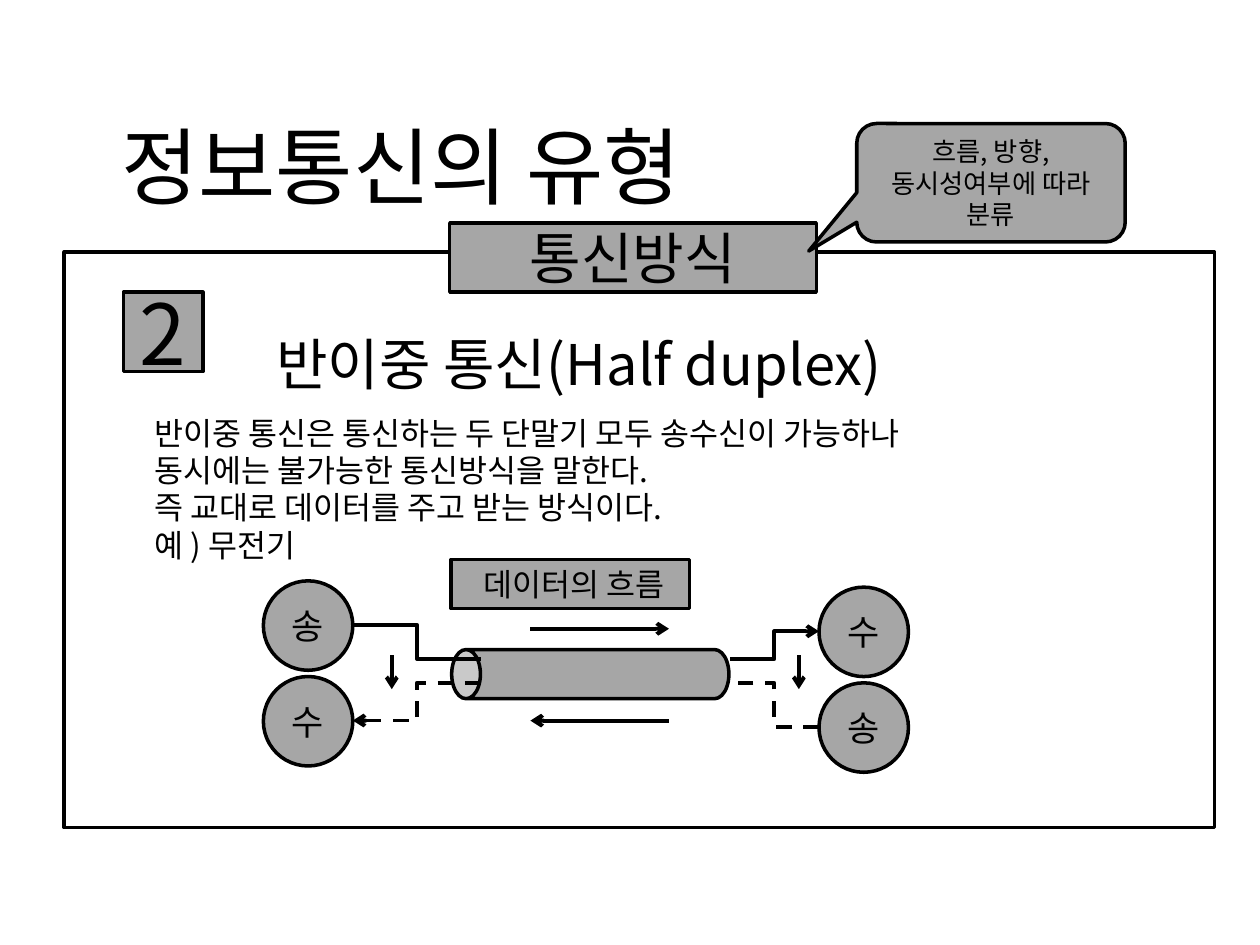
from pptx import Presentation
from pptx.dml.color import RGBColor
from pptx.enum.dml import MSO_LINE_DASH_STYLE as Dash
from pptx.enum.shapes import MSO_CONNECTOR as Link, MSO_SHAPE as Shape
from pptx.enum.text import MSO_ANCHOR as Anchor, PP_ALIGN as Align
from pptx.oxml.ns import qn
from pptx.util import Pt
from lxml.etree import SubElement

FONT = "Noto Sans CJK KR"
BLACK, GRAY, WHITE = "000000", "A6A6A6", "FFFFFF"


def color(value):
    return RGBColor.from_string(value)


def write(box, lines, margins, anchor=Anchor.MIDDLE):
    """Fill a box with lines of (text, size, alignment, line spacing)."""
    frame = box.text_frame
    side, top = margins
    layout = {"word_wrap": True, "vertical_anchor": anchor,
              "margin_left": Pt(side), "margin_right": Pt(side),
              "margin_top": Pt(top), "margin_bottom": Pt(top)}
    for name, value in layout.items():
        setattr(frame, name, value)
    for index, (text, size, align, spacing) in enumerate(lines):
        para = frame.add_paragraph() if index else frame.paragraphs[0]
        para.text = text
        para.alignment = align
        if spacing:
            para.line_spacing = Pt(spacing)
        for span in para.runs:
            span.font.size = Pt(size)
            span.font.name = FONT
            span.font.color.rgb = color(BLACK)
            SubElement(span.font._element, qn("a:ea"), typeface=FONT)


deck = Presentation()
deck.slide_width, deck.slide_height = Pt(720), Pt(540)
page = deck.slides.add_slide(deck.slide_layouts[6])

# Shapes, back to front: kind, place, fill, text lines, size, line spacing
shapes = [
    (Shape.RECTANGLE, (36.7, 144, 657.4, 329), WHITE, [], 0, None),
    (Shape.RECTANGLE, (257, 127.4, 209.5, 39.6), GRAY, ["통신방식"], 32, None),
    (Shape.RECTANGLE, (70.6, 167, 45.4, 45.4), GRAY, ["2"], 48, None),
    (Shape.ROUNDED_RECTANGULAR_CALLOUT, (489.6, 70.6, 153.4, 67.7), GRAY,
     ["흐름, 방향,", "동시성여부에 따라", "분류"], 15, 18),
    (Shape.RECTANGLE, (257.8, 319.7, 136.1, 28.1), GRAY,
     [" 데이터의 흐름"], 18, None),
    (Shape.CAN, (323.3, 306, 28.1, 158.4), GRAY, [], 0, None),
]
# Stations: sender over receiver on the left, receiver over sender on the right
for left, top, labels in [(150.5, 331.9, "송수"), (468, 335.5, "수송")]:
    for row, label in enumerate(labels):
        shapes.append((Shape.OVAL, (left, top + row * 54.7, 51.1, 51.1),
                       GRAY, [label], 20, None))

for kind, place, fill, texts, size, spacing in shapes:
    box = page.shapes.add_shape(kind, *map(Pt, place))
    box.shadow.inherit = False
    box.fill.solid()
    box.fill.fore_color.rgb = color(fill)
    box.line.color.rgb = color(BLACK)
    box.line.width = Pt(2)
    if kind == Shape.CAN:
        box.rotation = 270
        box.adjustments[0] = 0.585
    elif kind == Shape.ROUNDED_RECTANGULAR_CALLOUT:
        for index, value in enumerate((-0.679, 0.577, 0.167)):
            box.adjustments[index] = value
    if texts:
        write(box, [(text, size, Align.CENTER, spacing) for text in texts], (0, 0))

# Title
title = page.shapes.add_textbox(*map(Pt, (41.8, 54.7, 375.1, 78.5)))
write(title, [("정보통신의 유형", 48, Align.CENTER, None)], (7.2, 3.6))

# Heading and explanation
body = page.shapes.add_textbox(*map(Pt, (81.4, 181.4, 499, 144)))
write(body, [
    ("반이중 통신(Half duplex)", 32, Align.CENTER, 42),
    ("반이중 통신은 통신하는 두 단말기 모두 송수신이 가능하나", 18, Align.LEFT, 31),
    ("동시에는 불가능한 통신방식을 말한다.\n즉 교대로 데이터를 주고 받는 방식이다.",
     18, Align.LEFT, 21.4),
    ("예 ) 무전기", 18, Align.LEFT, 21.4),
], (7.2, 3.6), Anchor.TOP)

# Wires and flow arrows: kind, from, to, dashed, arrowhead end
wires = [
    (Link.ELBOW, (201.6, 357.1), (275, 376.6), False, None),
    (Link.ELBOW, (201.6, 411.8), (275, 390.2), True, "a:headEnd"),
    (Link.ELBOW, (468, 360.7), (416.9, 376.6), False, "a:headEnd"),
    (Link.ELBOW, (468, 415.4), (416.9, 390.2), True, None),
    (Link.STRAIGHT, (303.1, 359.3), (382.3, 359.3), False, "a:tailEnd"),
    (Link.STRAIGHT, (382.3, 411.8), (303.1, 411.8), False, "a:tailEnd"),
    (Link.STRAIGHT, (223.9, 374.4), (223.9, 393.8), False, "a:tailEnd"),
    (Link.STRAIGHT, (456.5, 374.4), (456.5, 393.8), False, "a:tailEnd"),
]
for kind, start, end, dashed, arrow in wires:
    wire = page.shapes.add_connector(kind, *map(Pt, start + end))
    wire.line.color.rgb = color(BLACK)
    wire.line.width = Pt(2.25)
    if dashed:
        wire.line.dash_style = Dash.DASH
    if arrow:
        SubElement(wire.line._get_or_add_ln(), qn(arrow), type="arrow")
    SubElement(wire._element.spPr, qn("a:effectLst"))

deck.save("out.pptx")
